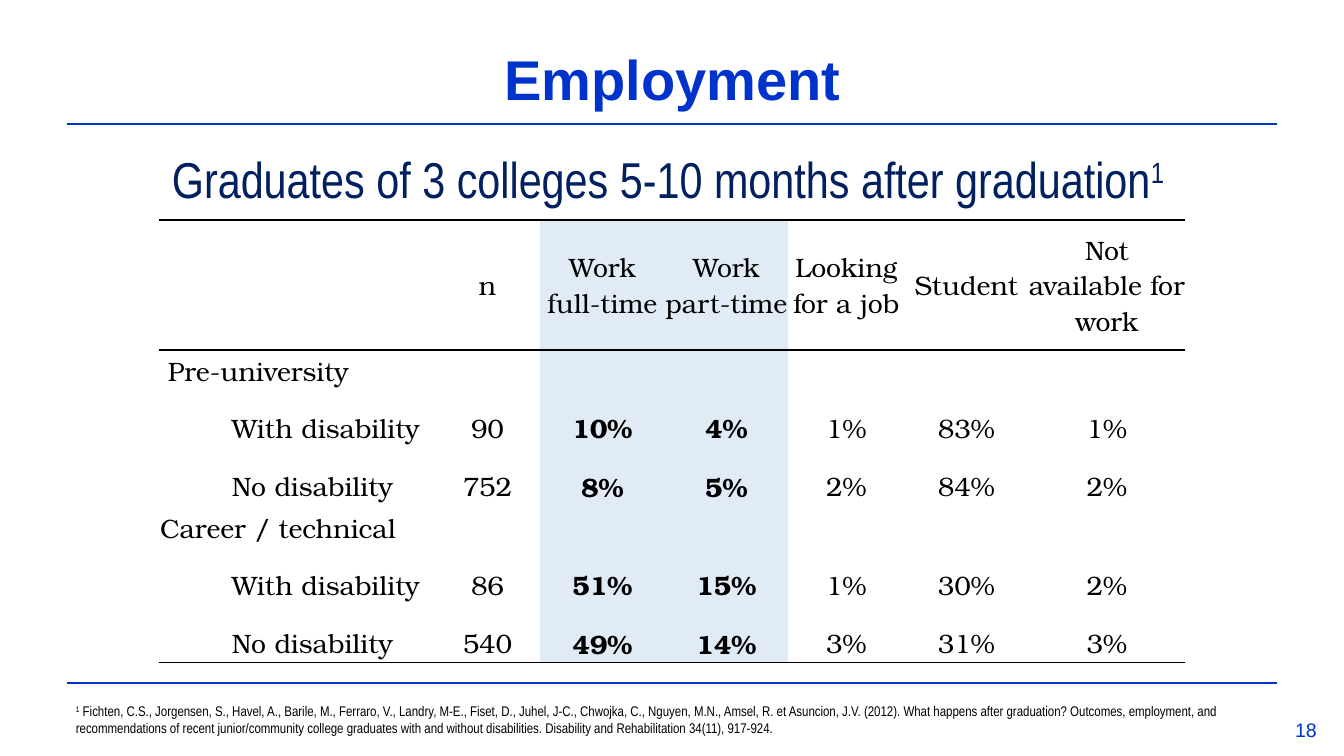
import pptx
import pptx.dml.color
import pptx.enum.shapes
import pptx.enum.text
import pptx.oxml
import pptx.oxml.ns
import pptx.util

EMU_PER_PX = 914400 / 100.8
COLORS = {"blue": "0033CC", "navy": "002060", "black": "000000", "shade": "E0EBF6"}
ALIGN = pptx.enum.text.PP_ALIGN
ANCHOR = pptx.enum.text.MSO_ANCHOR

COLUMN_WIDTHS = [72, 211, 90, 8, 124, 124, 116, 124, 157]
ROW_HEIGHTS = [130, 39, 77, 40, 40, 77, 40]
SHADED_COLUMNS = (4, 5)
RULED_EDGES = (0, 1, len(ROW_HEIGHTS))
GROUP_INDENTS = {"Pre-university": 9, "Career / technical": 1}
EMPLOYMENT = [
    ["", "", "n", "", "Work full-time", "Work part-time", "Looking for a job", "Student",
     "Not available for work"],
    ["Pre-university"] + [""] * 8,
    ["", "With disability", "90", "", "10%", "4%", "1%", "83%", "1%"],
    ["", "No disability", "752", "", "8%", "5%", "2%", "84%", "2%"],
    ["Career / technical"] + [""] * 8,
    ["", "With disability", "86", "", "51%", "15%", "1%", "30%", "2%"],
    ["", "No disability", "540", "", "49%", "14%", "3%", "31%", "3%"],
]
CITATION = (
    " Fichten, C.S., Jorgensen, S., Havel, A., Barile, M., Ferraro, V., Landry, M-E., "
    "Fiset, D., Juhel, J-C., Chwojka, C., Nguyen, M.N., Amsel, R. et Asuncion, J.V. (2012). "
    "What happens after graduation? Outcomes, employment, and recommendations of recent "
    "junior/community college graduates with and without disabilities. "
    "Disability and Rehabilitation 34(11), 917-924."
)


def px(length):
    return pptx.util.Emu(round(length * EMU_PER_PX))


def rgb(color):
    return pptx.dml.color.RGBColor.from_string(COLORS[color])


class SlideBuilder:
    """Draws styled elements on one slide, with lengths in px."""

    def __init__(self, presentation):
        self.slide = presentation.slides.add_slide(presentation.slide_layouts[6])

    def style(self, run, font, size, color, bold=False):
        run.font.name = font
        run.font.size = pptx.util.Pt(size)
        run.font.color.rgb = rgb(color)
        run.font.bold = bold

    def rule(self, y):
        line = self.slide.shapes.add_connector(
            pptx.enum.shapes.MSO_CONNECTOR.STRAIGHT, px(67), px(y), px(1277), px(y))
        line.line.color.rgb = rgb("blue")
        line.line.width = pptx.util.Pt(1.5)
        line._element.spPr.append(pptx.oxml.parse_xml(
            f'<a:effectLst {pptx.oxml.ns.nsdecls("a")}/>'))

    def text(self, box, parts, font, size, color, bold=False, align=ALIGN.LEFT,
             anchor=ANCHOR.TOP, superscript=None):
        shape = self.slide.shapes.add_textbox(*map(px, box))
        frame = shape.text_frame
        frame.word_wrap = True
        frame.vertical_anchor = anchor
        paragraph = frame.paragraphs[0]
        paragraph.alignment = align
        for index, part in enumerate(parts):
            run = paragraph.add_run()
            run.text = part
            self.style(run, font, size, color, bold)
            if index == superscript:
                run.font._element.set("baseline", "30000")

    def border(self, cell, side, visible):
        paint = (f'<a:solidFill><a:srgbClr val="{COLORS["black"]}"/></a:solidFill>'
                 if visible else "<a:noFill/>")
        cell._tc.get_or_add_tcPr().append(pptx.oxml.parse_xml(
            f'<a:ln{side} {pptx.oxml.ns.nsdecls("a")} w="12700">{paint}</a:ln{side}>'))

    def cell(self, cell, row, column, value):
        cell.margin_left = px(GROUP_INDENTS.get(value, 1))
        cell.margin_right = cell.margin_top = cell.margin_bottom = 0
        cell.vertical_anchor = ANCHOR.BOTTOM if value in GROUP_INDENTS else ANCHOR.MIDDLE
        for side, visible in (("L", False), ("R", False), ("T", row in RULED_EDGES),
                              ("B", row + 1 in RULED_EDGES)):
            self.border(cell, side, visible)
        shaded = column in SHADED_COLUMNS
        if shaded:
            cell.fill.solid()
            cell.fill.fore_color.rgb = rgb("shade")
        else:
            cell.fill.background()
        if value:
            cell.text_frame.text = value
            paragraph = cell.text_frame.paragraphs[0]
            paragraph.alignment = ALIGN.LEFT if column < 2 else ALIGN.CENTER
            self.style(paragraph.runs[0], "TeX Gyre Bonum", 19, "black", shaded and row > 0)

    def table(self, left, top, values):
        table = self.slide.shapes.add_table(
            len(ROW_HEIGHTS), len(COLUMN_WIDTHS), px(left), px(top),
            px(sum(COLUMN_WIDTHS)), px(sum(ROW_HEIGHTS))).table
        table.first_row = table.horz_banding = False
        for column, width in zip(table.columns, COLUMN_WIDTHS):
            column.width = px(width)
        for row, height in zip(table.rows, ROW_HEIGHTS):
            row.height = px(height)
        for row, row_values in enumerate(values):
            for column, value in enumerate(row_values):
                self.cell(table.cell(row, column), row, column, value)
            if row_values[0] in GROUP_INDENTS:
                table.cell(row, 0).merge(table.cell(row, 2))


def main():
    presentation = pptx.Presentation()
    presentation.slide_width = px(1344)
    presentation.slide_height = px(756)
    builder = SlideBuilder(presentation)
    for y in (683, 124):
        builder.rule(y)
    builder.text((1268, 713, 76, 30), ["18"], "Arial", 14, "blue", align=ALIGN.CENTER)
    builder.text((71, 29, 1203, 88), ["Employment"], "Arial", 40, "blue", bold=True,
                 align=ALIGN.CENTER, anchor=ANCHOR.BOTTOM)
    builder.text((162, 143, 1084, 72),
                 ["Graduates of 3 colleges 5-10 months after graduation", "1"],
                 "Arial Narrow", 36, "navy", superscript=1)
    builder.table(159, 220, EMPLOYMENT)
    builder.text((66, 698, 1203, 44), ["1", CITATION], "Arial Narrow", 10, "black",
                 superscript=0)
    presentation.save("out.pptx")


if __name__ == "__main__":
    main()
